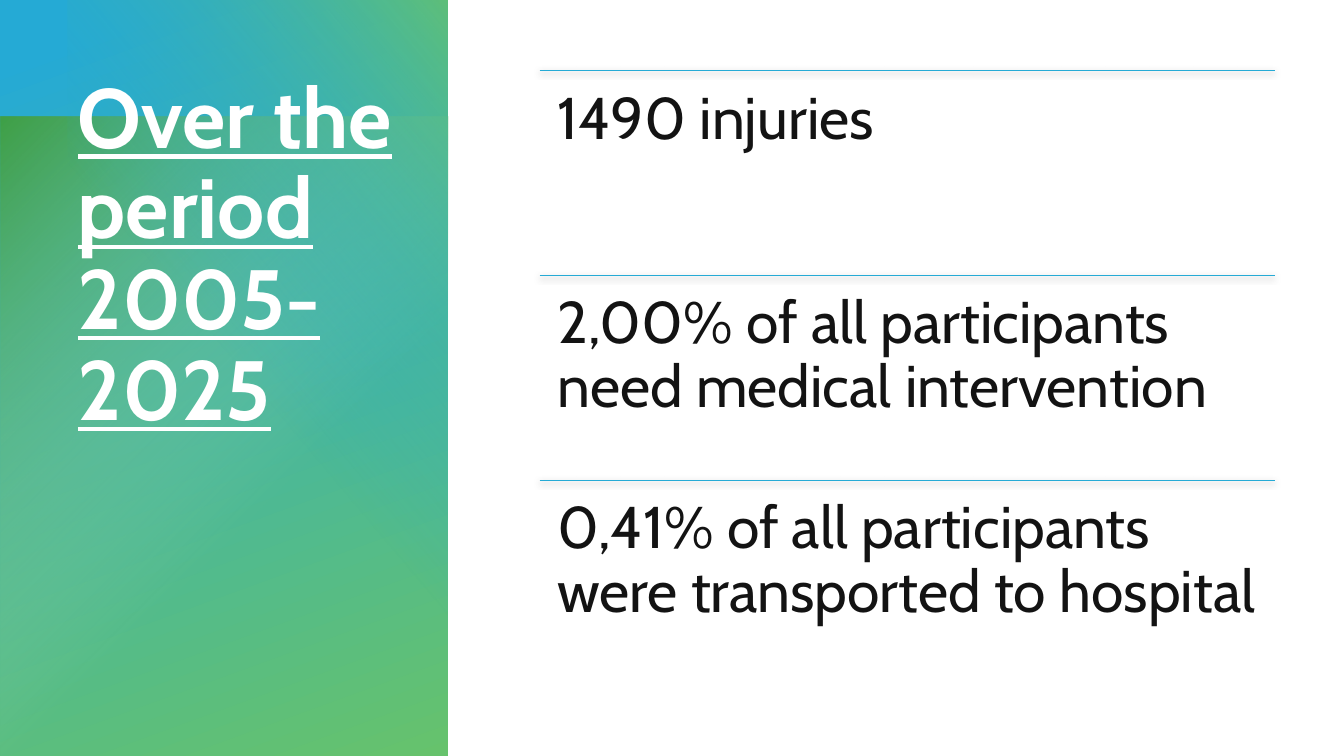
from lxml.etree import SubElement
from pptx import Presentation
from pptx.dml.color import RGBColor as RGB
from pptx.enum.shapes import MSO_CONNECTOR as CONNECTOR, MSO_SHAPE as SHAPE
from pptx.enum.text import MSO_ANCHOR as ANCHOR
from pptx.oxml.ns import qn
from pptx.util import Pt

COLORS = {
    "blue": "25AAD5",
    "green": "66C26C",
    "forest": "3F9F46",
    "mint": "A3DAA7",
    "white": "FFFFFF",
    "ink": "131313",
    "black": "000000",
}


class SlideBuilder:
    font_name = "Cabin"

    def __init__(self, slide):
        self.slide = slide

    def color(self, parent, name, opacity):
        color = SubElement(parent, qn("a:srgbClr"), val=COLORS[name])
        if opacity < 100:
            SubElement(color, qn("a:alpha"), val=str(opacity * 1000))

    def gradient_panel(self, box, stops, angle=None, rotation=0):
        panel = self.slide.shapes.add_shape(SHAPE.RECTANGLE, *map(Pt, box))
        panel.rotation = rotation
        panel.shadow.inherit = False
        panel.line.fill.background()
        properties = panel._element.spPr
        gradient = SubElement(properties, qn("a:gradFill"), rotWithShape="1")
        properties.find(qn("a:prstGeom")).addnext(gradient)
        stop_list = SubElement(gradient, qn("a:gsLst"))
        for position, name, opacity in stops:
            stop = SubElement(stop_list, qn("a:gs"), pos=str(position * 1000))
            self.color(stop, name, opacity)
        if angle is None:
            circle = SubElement(gradient, qn("a:path"), path="circle")
            SubElement(circle, qn("a:fillToRect"), r="100000", b="100000")
        else:
            SubElement(gradient, qn("a:lin"), ang=str(angle * 60000), scaled="0")

    def text(self, box, wording, color, insets, **font_format):
        frame = self.slide.shapes.add_textbox(*map(Pt, box)).text_frame
        frame.word_wrap = True
        frame.vertical_anchor = ANCHOR.TOP
        for side, inset in zip(("left", "top", "right", "bottom"), insets):
            setattr(frame, f"margin_{side}", Pt(inset))
        paragraph = frame.paragraphs[0]
        paragraph.line_spacing = 0.9
        run = paragraph.add_run()
        run.text = wording
        run.font.color.rgb = RGB.from_string(COLORS[color])
        for name, value in {"name": self.font_name, **font_format}.items():
            setattr(run.font, name, value)

    def divider(self, left, top, width):
        rule = self.slide.shapes.add_connector(
            CONNECTOR.STRAIGHT, Pt(left), Pt(top), Pt(left + width), Pt(top)
        )
        rule.line.width = Pt(0.5)
        rule.line.color.rgb = RGB.from_string(COLORS["blue"])
        effects = SubElement(rule._element.spPr, qn("a:effectLst"))
        shadow = SubElement(
            effects,
            qn("a:outerShdw"),
            blurRad=str(Pt(4.5)),
            dist=str(Pt(1.5)),
            dir=str(90 * 60000),
            rotWithShape="0",
        )
        self.color(shadow, "black", 63)


def main():
    deck = Presentation()
    deck.slide_width, deck.slide_height = Pt(960), Pt(540)
    builder = SlideBuilder(deck.slides.add_slide(deck.slide_layouts[6]))

    builder.gradient_panel(
        (0, 0, 320, 540.5), [(7, "blue", 100), (100, "green", 100)], angle=70
    )
    builder.gradient_panel(
        (0, 83.3, 320, 457.2), [(0, "forest", 100), (60, "mint", 0)], rotation=180
    )
    builder.gradient_panel(
        (-41, 89.3, 450, 271.4),
        [(0, "green", 86), (57, "blue", 0)],
        angle=230,
        rotation=270,
    )
    builder.text(
        (48.5, 50.4, 242.6, 316),
        "Over the period 2005-2025",
        "white",
        (7.2, 3.6, 7.2, 3.6),
        size=Pt(60),
        bold=True,
        underline=True,
    )

    findings = [
        "1490 injuries",
        "2,00% of all participants need medical intervention",
        "0,41% of all participants were transported to hospital",
    ]
    left, first_top, width, row_height = 385.4, 50.4, 525.4, 146.4
    for row, finding in enumerate(findings):
        top = first_top + row * row_height
        builder.divider(left, top, width)
        builder.text(
            (left, top, width, row_height), finding, "ink", (12.6,) * 4, size=Pt(42)
        )

    deck.save("out.pptx")


if __name__ == "__main__":
    main()
